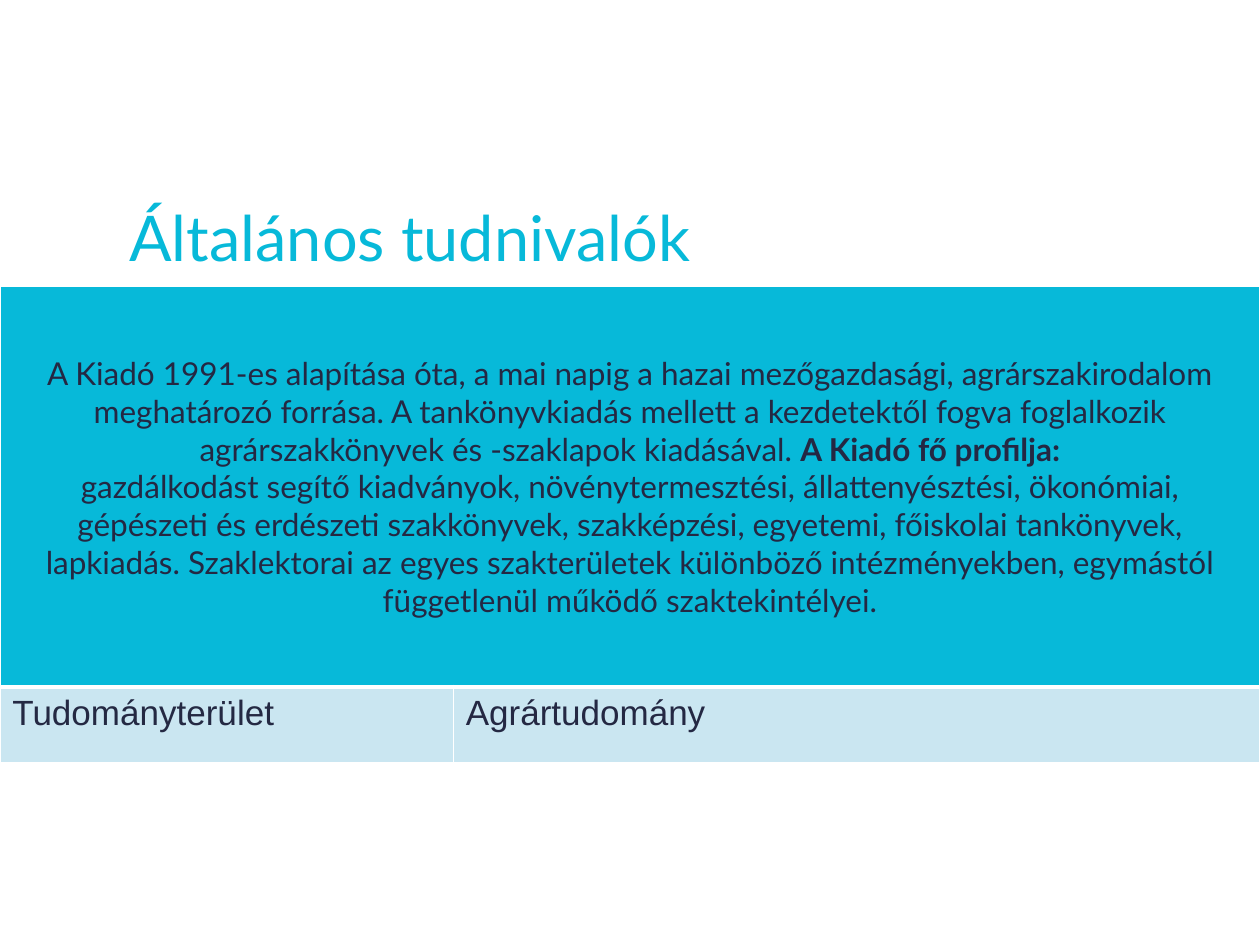
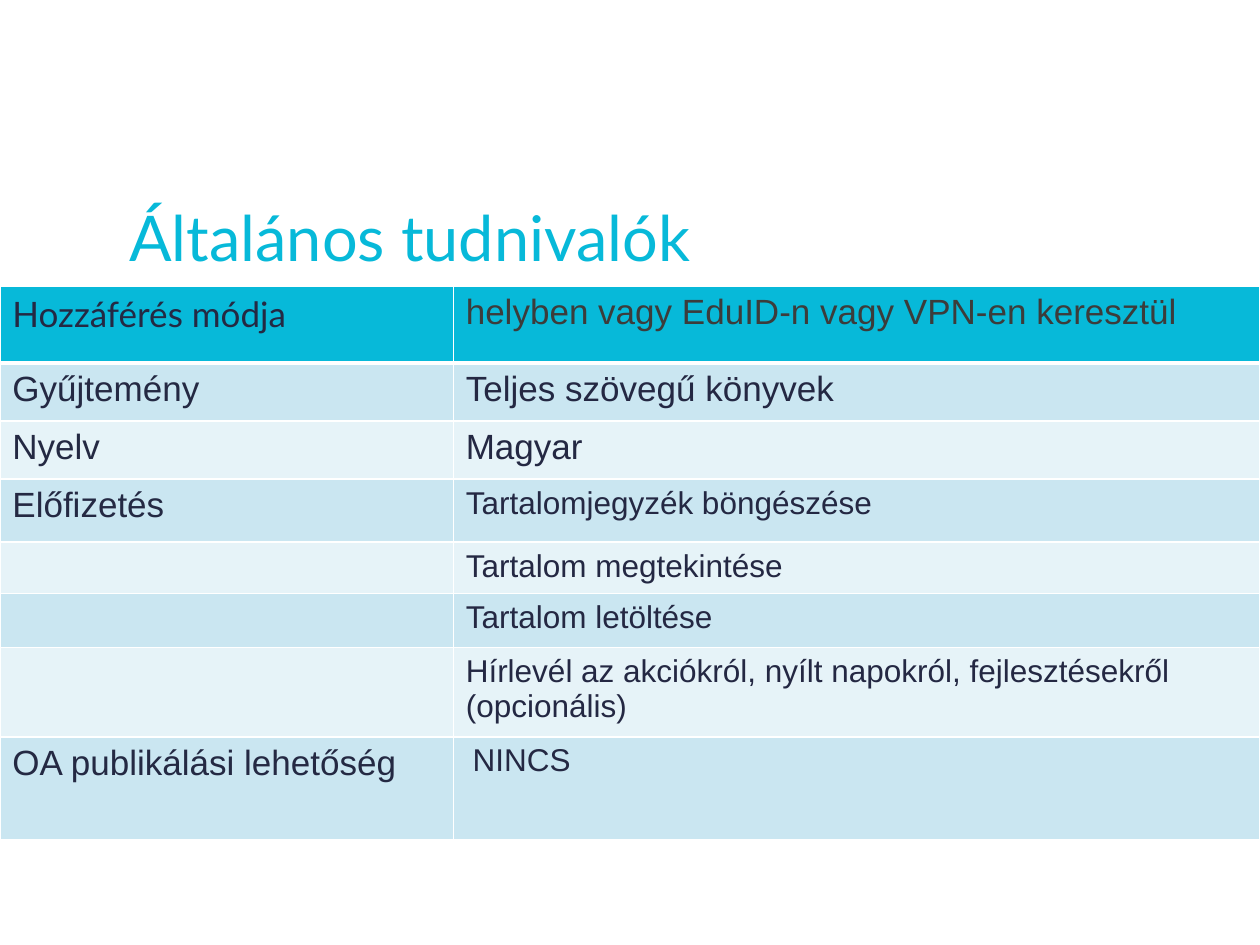
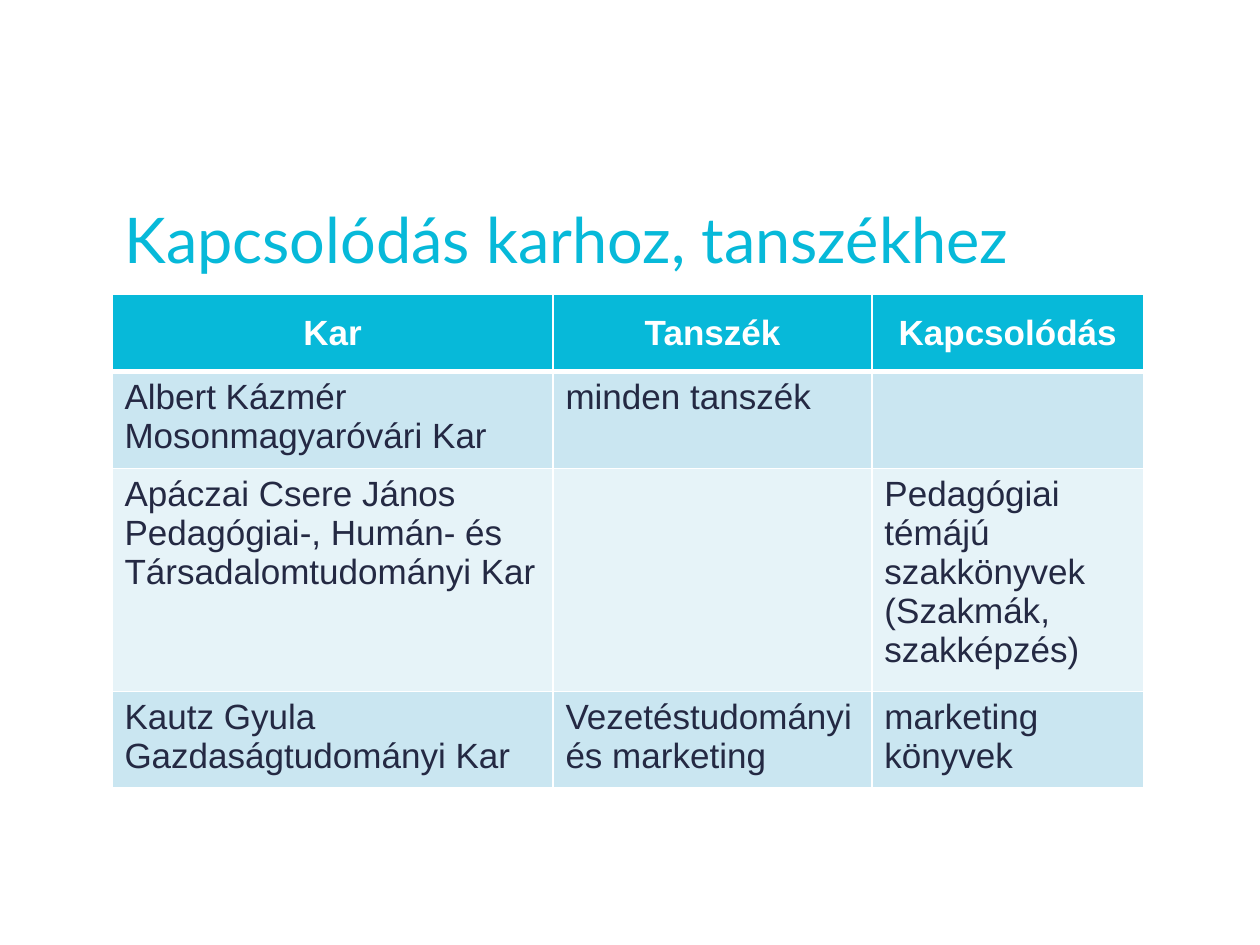
from dataclasses import dataclass, replace
from typing import Any

from lxml import etree
from pptx import Presentation
from pptx import util as u
from pptx.dml.color import RGBColor
from pptx.enum import text
from pptx.oxml import ns

Cm, Pt = u.Cm, u.Pt


@dataclass(frozen=True)
class Theme:
    accent: str = "07B9D9"
    band: str = "CAE6F1"
    pale: str = "E6F3F8"
    white: str = "FFFFFF"
    ink: str = "242843"
    label_ink: str = "242943"
    grey: str = "3C3C3B"
    heading_font: str = "Lato"
    table_font: str = "Arial"
    title_size: int = 36
    cell_size: int = 20
    detail_size: int = 18
    rule: int = 1
    header_rule: int = 3


THEME = Theme()


@dataclass(frozen=True)
class Style:
    color: str = THEME.ink
    font: str = THEME.table_font
    size: int = THEME.cell_size
    bold: bool = False


VALUE = Style()
LABEL = Style(color=THEME.label_ink)
DETAIL = Style(size=THEME.detail_size)
HEADER = Style(color=THEME.white, bold=True)
PROFILE = Style(font=THEME.heading_font, size=THEME.detail_size)
TITLE = Style(THEME.accent, THEME.heading_font, THEME.title_size)


@dataclass(frozen=True)
class Entry:
    words: str | tuple[str, ...]
    style: Style = VALUE
    centred: bool = False
    span: int = 1
    indent: float = 0.25


@dataclass(frozen=True)
class Grid:
    left: float
    top: float
    columns: tuple[float, ...]
    heights: tuple[float, ...]
    rows: tuple[tuple[Entry, ...], ...]


@dataclass(frozen=True)
class Page:
    title: str
    title_box: tuple[float, float, float, float]
    grid: Grid


def apply(target: Any, values: dict[str, Any]) -> None:
    for key, value in values.items():
        setattr(target, key, value)


def style_font(font: Any, style: Style) -> None:
    apply(font, {"name": style.font, "size": Pt(style.size), "bold": style.bold})
    font.color.rgb = RGBColor.from_string(style.color)


def add_border(cell: Any, side: str, width: int) -> None:
    line = etree.SubElement(cell._tc.get_or_add_tcPr(), ns.qn(f"a:ln{side}"), w=str(Pt(width)))
    fill = etree.SubElement(line, ns.qn("a:solidFill"))
    etree.SubElement(fill, ns.qn("a:srgbClr"), val=THEME.white)


def paint_cell(cell: Any, row: int) -> None:
    heavy = {0: "B", 1: "T"}.get(row)
    for side in "LRTB":
        add_border(cell, side, THEME.header_rule if side == heavy else THEME.rule)
    color = THEME.accent if row == 0 else THEME.band if row % 2 else THEME.pale
    cell.fill.solid()
    cell.fill.fore_color.rgb = RGBColor.from_string(color)


def write_entry(cell: Any, entry: Entry) -> None:
    apply(cell, {
        "margin_left": Cm(entry.indent), "margin_right": Cm(0.25),
        "margin_top": Cm(0.13), "margin_bottom": Cm(0.13),
        "vertical_anchor": text.MSO_ANCHOR.MIDDLE if entry.centred else text.MSO_ANCHOR.TOP,
    })
    if not entry.words:
        return
    paragraph = cell.text_frame.paragraphs[0]
    paragraph.alignment = text.PP_ALIGN.CENTER if entry.centred else text.PP_ALIGN.LEFT
    if isinstance(entry.words, str):
        parts = [(entry.words, entry.style)]
    else:
        intro, lead, details = entry.words
        parts = [(intro, entry.style), (lead, replace(entry.style, bold=True)),
                 (None, entry.style), (details, entry.style)]
    for words, style in parts:
        if words is None:
            paragraph.add_line_break()
            continue
        run = paragraph.add_run()
        run.text = words
        style_font(run.font, style)


def add_grid(slide: Any, grid: Grid) -> None:
    table = slide.shapes.add_table(
        len(grid.heights), len(grid.columns), Cm(grid.left), Cm(grid.top),
        Cm(sum(grid.columns)), Cm(sum(grid.heights))).table
    table.horz_banding = False
    for column, width in zip(table.columns, grid.columns):
        column.width = Cm(width)
    for row, height in zip(table.rows, grid.heights):
        row.height = Cm(height)
    for r, entries in enumerate(grid.rows):
        for c in range(len(grid.columns)):
            paint_cell(table.cell(r, c), r)
        for c, entry in enumerate(entries):
            if entry.span > 1:
                table.cell(r, c).merge(table.cell(r, c + entry.span - 1))
            write_entry(table.cell(r, c), entry)


def add_title(slide: Any, page: Page) -> None:
    title = slide.shapes.title
    apply(title, dict(zip(("left", "top", "width", "height"), map(Cm, page.title_box))))
    frame = title.text_frame
    frame.text = page.title
    apply(frame, {
        "margin_left": Cm(0.25), "margin_right": Cm(0.25),
        "margin_top": Cm(0.13), "margin_bottom": Cm(0.13), "word_wrap": True,
        "auto_size": text.MSO_AUTO_SIZE.NONE, "vertical_anchor": text.MSO_ANCHOR.MIDDLE,
    })
    paragraph = frame.paragraphs[0]
    apply(paragraph, {"alignment": text.PP_ALIGN.LEFT, "line_spacing": 0.9})
    style_font(paragraph.runs[0].font, TITLE)


GENERAL_TITLE = "Általános tudnivalók"
GENERAL_BOX = (2.36, 4.11, 15.6, 1.52)
GENERAL_COLUMNS = (9.14, 16.26)
GENERAL_TOP = 5.77
BLANK = Entry("")

PROFILE_TEXT = (
    "A Kiadó 1991-es alapítása óta, a mai napig a hazai mezőgazdasági, agrárszakirodalom "
    "meghatározó forrása. A tankönyvkiadás mellett a kezdetektől fogva foglalkozik "
    "agrárszakkönyvek és -szaklapok kiadásával. ",
    "A Kiadó fő profilja:",
    "gazdálkodást segítő kiadványok, növénytermesztési, állattenyésztési, ökonómiai, "
    "gépészeti és erdészeti szakkönyvek, szakképzési, egyetemi, főiskolai tankönyvek, "
    "lapkiadás. Szaklektorai az egyes szakterületek különböző intézményekben, egymástól "
    "függetlenül működő szaktekintélyei.",
)

PAGES = (
    Page(GENERAL_TITLE, GENERAL_BOX, Grid(
        0, GENERAL_TOP, GENERAL_COLUMNS, (8.08, 1.52), (
            (Entry(PROFILE_TEXT, PROFILE, centred=True, span=2),),
            (Entry("Tudományterület", LABEL), Entry("Agrártudomány")),
        ))),
    Page(GENERAL_TITLE, GENERAL_BOX, Grid(
        0, GENERAL_TOP, GENERAL_COLUMNS, (1.55, 1.17, 1.17, 1.27, 1.02, 1.09, 1.8, 2.08), (
            (Entry("Hozzáférés módja", replace(LABEL, font=THEME.heading_font)),
             Entry("helyben vagy EduID-n vagy VPN-en keresztül", Style(color=THEME.grey))),
            (Entry("Gyűjtemény", LABEL), Entry("Teljes szövegű könyvek")),
            (Entry("Nyelv", LABEL), Entry("Magyar")),
            (Entry("Előfizetés", LABEL), Entry("Tartalomjegyzék böngészése", DETAIL)),
            (BLANK, Entry("Tartalom megtekintése", DETAIL)),
            (BLANK, Entry("Tartalom letöltése", DETAIL)),
            (BLANK, Entry("Hírlevél az akciókról, nyílt napokról, fejlesztésekről (opcionális)",
                          DETAIL)),
            (Entry("OA publikálási lehetőség", LABEL), Entry("NINCS", DETAIL, indent=0.39)),
        ))),
    Page("Kapcsolódás karhoz, tanszékhez", (2.26, 4.14, 21.23, 1.52), Grid(
        2.26, 5.94, (8.89, 6.43, 5.47), (1.55, 1.95, 4.5, 1.94), (
            tuple(Entry(name, HEADER, centred=True) for name in ("Kar", "Tanszék", "Kapcsolódás")),
            (Entry("Albert Kázmér Mosonmagyaróvári Kar"), Entry("minden tanszék", LABEL), BLANK),
            (Entry("Apáczai Csere János Pedagógiai-, Humán- és Társadalomtudományi Kar", LABEL),
             BLANK,
             Entry("Pedagógiai témájú szakkönyvek (Szakmák, szakképzés)", LABEL)),
            (Entry("Kautz Gyula Gazdaságtudományi Kar", LABEL),
             Entry("Vezetéstudományi és marketing", LABEL),
             Entry("marketing könyvek", LABEL)),
        ))),
)


def main() -> None:
    deck = Presentation()
    apply(deck, {"slide_width": Cm(25.4), "slide_height": Cm(19.05)})
    for page in PAGES:
        slide = deck.slides.add_slide(deck.slide_layouts[5])
        add_title(slide, page)
        add_grid(slide, page.grid)
    deck.save("out.pptx")


if __name__ == "__main__":
    main()
